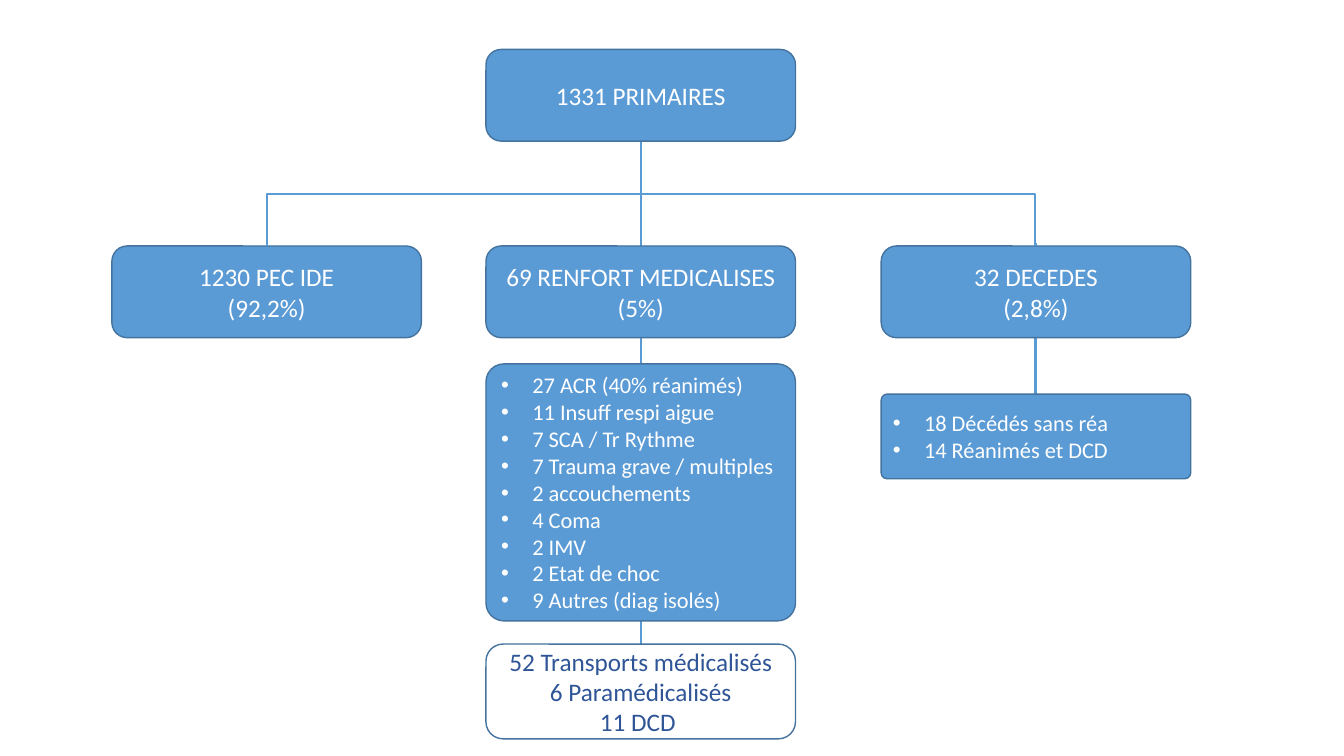
from lxml import etree
from pptx import Presentation
from pptx import util as u
from pptx.dml import color
from pptx.enum import shapes, text
from pptx.oxml import ns

PX = 9144
BLUE, OUTLINE, WHITE, NAVY = "5B9BD5", "43739E", "FFFFFF", "2F5597"
BOX_W, BOX_H = 307, 91
LEFT, CENTRE, RIGHT = 111, 482, 874
TRUNK_X, DEATHS_X, CARE_X = 636, 1027, 265
LEVEL_TOP, BRANCH_Y = 244, 192


def px(value):
    return u.Emu(value * PX)


def rgb(value):
    return color.RGBColor.from_string(value)


def apply(target, values):
    for key, value in values.items():
        setattr(target, key, value)


def connect(slide, start, end, kind=shapes.MSO_CONNECTOR.STRAIGHT):
    link = slide.shapes.add_connector(kind, *map(px, start + end))
    link.line.color.rgb = rgb(BLUE)
    link.line.width = u.Pt(1.5)
    etree.SubElement(link._element.spPr, ns.qn("a:effectLst"))
    return link


def elbow(slide, start, end, degrees, preset):
    link = connect(slide, start, end, shapes.MSO_CONNECTOR.ELBOW)
    properties = link._element.spPr
    properties.find(ns.qn("a:xfrm")).set("rot", str(degrees * 60000))
    properties.find(ns.qn("a:prstGeom")).set("prst", preset)


def add_bullet(paragraph):
    properties = paragraph._p.get_or_add_pPr()
    properties.set("marL", str(px(31)))
    properties.set("indent", str(px(-31)))
    font = etree.SubElement(properties, ns.qn("a:buFont"))
    font.set("typeface", "Arial")
    etree.SubElement(properties, ns.qn("a:buChar")).set("char", "•")


def box(slide, left, top, lines, height=BOX_H, size=18, fill=BLUE,
        ink=WHITE, corner=0.167, bullets=False):
    card = slide.shapes.add_shape(
        shapes.MSO_SHAPE.ROUNDED_RECTANGLE, *map(px, (left, top, BOX_W, height)))
    card.shadow.inherit = False
    card.adjustments[0] = corner
    if fill:
        card.fill.solid()
        card.fill.fore_color.rgb = rgb(fill)
    else:
        card.fill.background()
    card.line.color.rgb = rgb(OUTLINE)
    card.line.width = u.Pt(1)
    frame = card.text_frame
    apply(frame, {"text": "\n".join(lines), "word_wrap": True,
                  "vertical_anchor": text.MSO_ANCHOR.MIDDLE})
    for paragraph in frame.paragraphs:
        paragraph.alignment = text.PP_ALIGN.LEFT if bullets else text.PP_ALIGN.CENTER
        if bullets:
            add_bullet(paragraph)
        for run in paragraph.runs:
            apply(run.font, {"name": "Calibri", "size": u.Pt(size)})
            run.font.color.rgb = rgb(ink)


def main():
    deck = Presentation()
    apply(deck, {"slide_width": px(1333), "slide_height": px(750)})
    slide = deck.slides.add_slide(deck.slide_layouts[6])

    connect(slide, (TRUNK_X, BRANCH_Y), (TRUNK_X, 639))
    connect(slide, (DEATHS_X, 241), (DEATHS_X, 429))

    box(slide, CENTRE, 49, ["1331 PRIMAIRES"])
    groups = [
        (LEFT, ["1230 PEC IDE", "(92,2%)"]),
        (CENTRE, ["69 RENFORT MEDICALISES", "(5%)"]),
        (RIGHT, ["32 DECEDES", "(2,8%)"]),
    ]
    for left, lines in groups:
        box(slide, left, LEVEL_TOP, lines)

    diagnoses = [
        "27 ACR (40% réanimés)", "11 Insuff respi aigue", "7 SCA / Tr Rythme",
        "7 Trauma grave / multiples", "2 accouchements", "4 Coma", "2 IMV",
        "2 Etat de choc", "9 Autres (diag isolés)",
    ]
    deaths = ["18 Décédés sans réa", "14 Réanimés et DCD"]
    for left, top, height, lines in [(CENTRE, 361, 255, diagnoses),
                                     (RIGHT, 391, 84, deaths)]:
        box(slide, left, top, lines, height, size=16, corner=0.07, bullets=True)

    transports = ["52 Transports médicalisés", "6 Paramédicalisés", "11 DCD "]
    box(slide, CENTRE, 639, transports, 94, fill=None, ink=NAVY, corner=0.18)

    elbow(slide, (883, -3), (779, 388), 270, "bentConnector3")
    elbow(slide, (476, 404), (424, 33), 90, "bentConnector2")
    deck.save("out.pptx")


if __name__ == "__main__":
    main()
